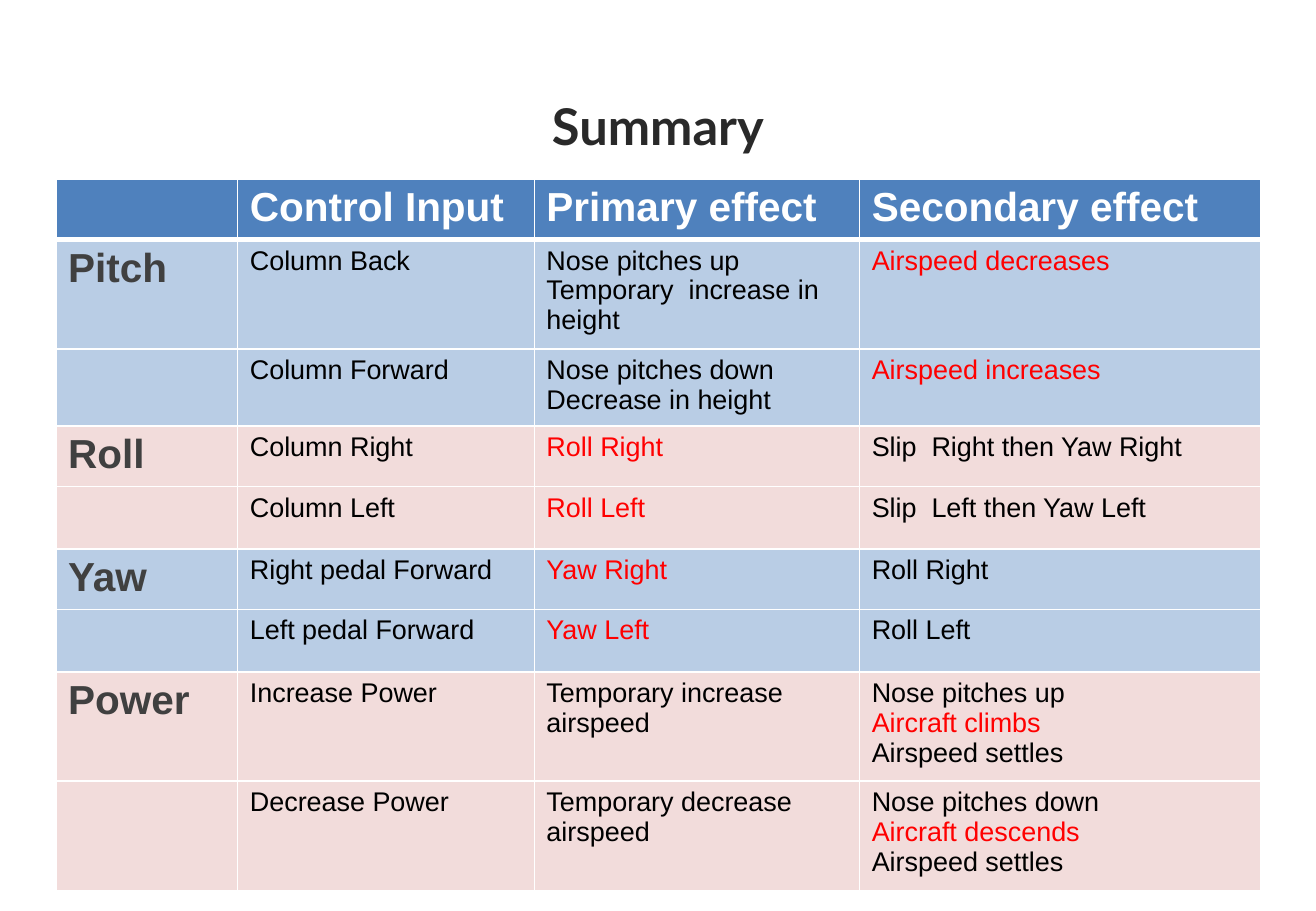
from dataclasses import dataclass
from itertools import cycle

from lxml.etree import SubElement
from pptx import Presentation
from pptx.dml.color import RGBColor as RGB
from pptx.enum.text import MSO_ANCHOR as Anchor, PP_ALIGN as Align
from pptx.oxml.ns import qn
from pptx.util import Cm, Pt


class Key(str):
    """A line shown in the highlight colour."""


TITLE = "Summary"
HEADINGS = ["", "Control Input", "Primary effect", "Secondary effect"]
CONTROLS = {
    "Pitch": [
        (["Column Back"],
         ["Nose pitches up", "Temporary  increase in height"],
         [Key("Airspeed decreases")]),
        (["Column Forward"],
         ["Nose pitches down", "Decrease in height"],
         [Key("Airspeed increases")]),
    ],
    "Roll": [
        (["Column Right"], [Key("Roll Right")], ["Slip  Right then Yaw Right"]),
        (["Column Left"], [Key("Roll Left")], ["Slip  Left then Yaw Left"]),
    ],
    "Yaw": [
        (["Right pedal Forward"], [Key("Yaw Right")], ["Roll Right"]),
        (["Left pedal Forward"], [Key("Yaw Left")], ["Roll Left"]),
    ],
    "Power": [
        (["Increase Power"],
         ["Temporary increase airspeed"],
         ["Nose pitches up", Key("Aircraft climbs"), "Airspeed settles"]),
        (["Decrease Power"],
         ["Temporary decrease airspeed"],
         ["Nose pitches down", Key("Aircraft descends"), "Airspeed settles"]),
    ],
}
COLUMN_WIDTHS = [3.8, 6.2, 6.8, 8.38]
ROW_HEIGHTS = [1.25, 2.15, 1.5, 1.19, 1.3, 1.19, 1.3, 2.13, 2.11]


@dataclass(frozen=True)
class Theme:
    title_font: str = "Lato"
    body_font: str = "Arial"
    title_size: int = 30
    heading_size: int = 24
    body_size: int = 16
    title: str = "292929"
    heading: str = "FFFFFF"
    control: str = "404040"
    body: str = "000000"
    highlight: str = "FF0000"
    heading_fill: str = "4F81BD"
    group_fills: tuple = ("B9CDE5", "F2DCDB")
    rule: str = "FFFFFF"
    thin_rule: int = 1
    thick_rule: int = 3


THEME = Theme()


def write(frame, lines, font, size, color, bold=False, align=Align.LEFT):
    frame.text = "\n".join(lines)
    for line, paragraph in zip(lines, frame.paragraphs):
        paragraph.alignment = align
        for run in paragraph.runs:
            run.font.name = font
            run.font.size = Pt(size)
            run.font.bold = bold
            shown = THEME.highlight if isinstance(line, Key) else color
            run.font.color.rgb = RGB.from_string(shown)


def style_cell(cell, fill, top, bottom):
    properties = cell._tc.get_or_add_tcPr()
    thin = THEME.thin_rule
    for side, width in (("L", thin), ("R", thin), ("T", top), ("B", bottom)):
        rule = SubElement(properties, qn(f"a:ln{side}"), w=str(Pt(width)))
        solid = SubElement(rule, qn("a:solidFill"))
        SubElement(solid, qn("a:srgbClr"), val=THEME.rule)
    cell.fill.solid()
    cell.fill.fore_color.rgb = RGB.from_string(fill)


def add_title(slide):
    frame = slide.shapes.add_textbox(Cm(1.37), Cm(1.82), Cm(24.77), Cm(1.6)).text_frame
    frame.word_wrap = True
    frame.vertical_anchor = Anchor.MIDDLE
    write(frame, [TITLE], THEME.title_font, THEME.title_size, THEME.title, True, Align.CENTER)


def add_effects_table(slide):
    rows = [(THEME.heading_fill, [[heading] for heading in HEADINGS])]
    for fill, (control, effects) in zip(cycle(THEME.group_fills), CONTROLS.items()):
        for index, cells in enumerate(effects):
            rows.append((fill, [["" if index else control], *cells]))

    table = slide.shapes.add_table(
        len(rows), len(HEADINGS), Cm(1.17), Cm(3.74),
        Cm(sum(COLUMN_WIDTHS)), Cm(sum(ROW_HEIGHTS)),
    ).table
    table.first_row = table.horz_banding = False
    for column, width in zip(table.columns, COLUMN_WIDTHS):
        column.width = Cm(width)
    for row, height in zip(table.rows, ROW_HEIGHTS):
        row.height = Cm(height)

    for r, (fill, cells) in enumerate(rows):
        top = THEME.thick_rule if r == 1 else THEME.thin_rule
        bottom = THEME.thick_rule if r == 0 else THEME.thin_rule
        for c, lines in enumerate(cells):
            cell = table.cell(r, c)
            style_cell(cell, fill, top, bottom)
            large = r == 0 or c == 0
            size = THEME.heading_size if large else THEME.body_size
            color = THEME.heading if r == 0 else THEME.control if c == 0 else THEME.body
            write(cell.text_frame, lines, THEME.body_font, size, color, large)


def main():
    deck = Presentation()
    deck.slide_width, deck.slide_height = Cm(27.51), Cm(19.05)
    slide = deck.slides.add_slide(deck.slide_layouts[6])
    add_title(slide)
    add_effects_table(slide)
    deck.save("out.pptx")


if __name__ == "__main__":
    main()
